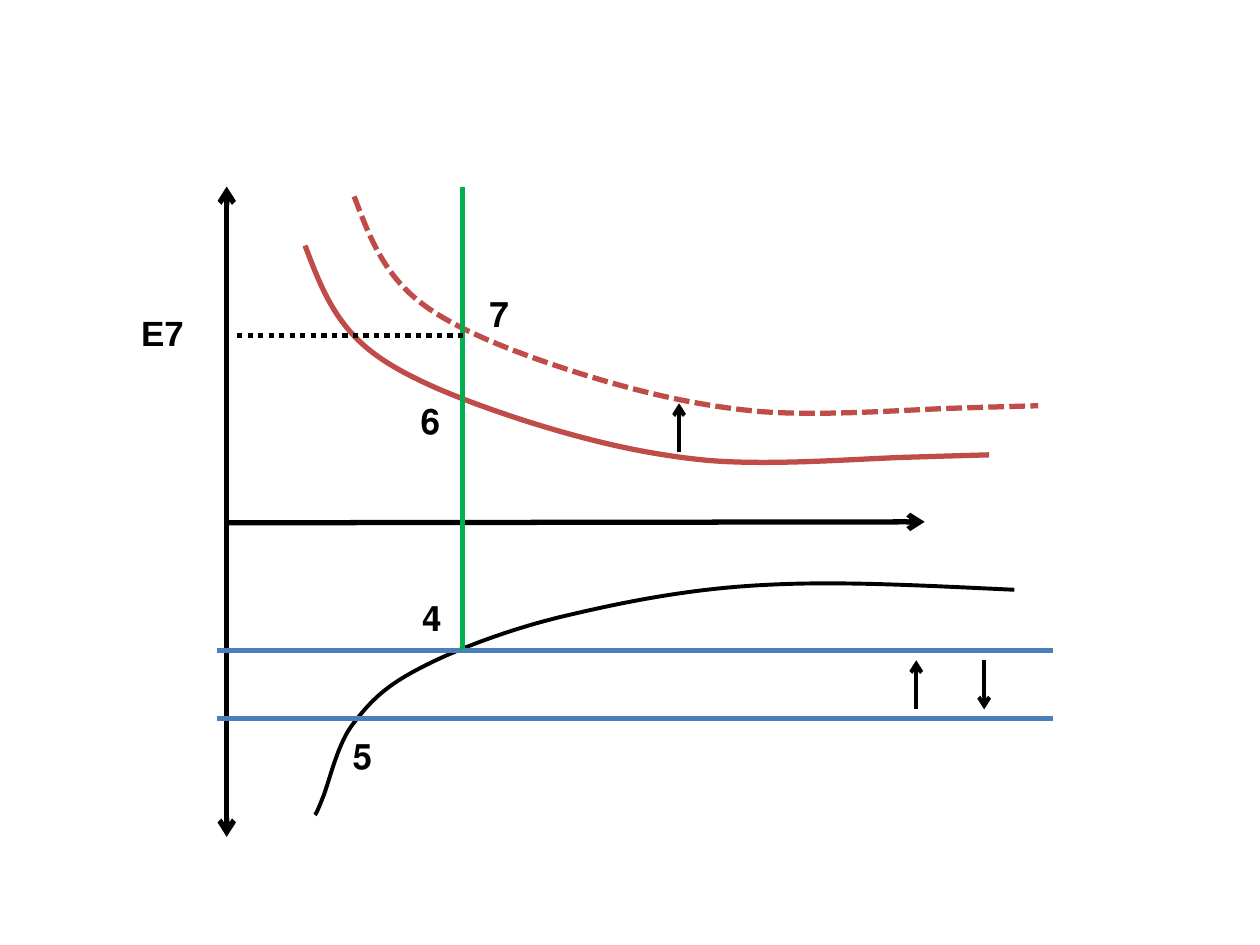
from lxml import etree
from pptx import Presentation, util as u
from pptx.dml.color import RGBColor
from pptx.enum import dml, shapes, text
from pptx.oxml.ns import qn

BLACK, RED, BLUE, GREEN = "000000", "BF4C48", "4B7EBC", "00B050"
THICK, THIN = 3, 2.25
DASHED, DOTTED = dml.MSO_LINE.SQUARE_DOT, dml.MSO_LINE.ROUND_DOT

AXIS_X, AXIS_TOP, AXIS_BOTTOM = 4.57, 3.76, 16.87
LEVELS = (13.11, 14.48)
GREEN_X = 9.32
CURVE_SHIFT = 0.99

# Each curve: a start point, then two control points and an end point per segment.
LOWER_CURVE = [
    (20.45, 11.89),
    (18.69, 11.81), (16.97, 11.71), (15.47, 11.79),
    (13.97, 11.86), (12.65, 12.12), (11.46, 12.4),
    (10.29, 12.67), (9.14, 13.11), (8.43, 13.49),
    (7.7, 13.87), (7.42, 14.2), (7.09, 14.63),
    (6.78, 15.06), (6.63, 15.8), (6.5, 16.1),
    (6.38, 16.41), (6.35, 16.43), (6.35, 16.43),
]
UPPER_CURVE = [
    (6.15, 4.95),
    (6.45, 5.74), (6.73, 6.5), (7.49, 7.09),
    (8.23, 7.67), (9.55, 8.15), (10.67, 8.51),
    (11.79, 8.86), (12.9, 9.14), (14.15, 9.27),
    (15.42, 9.4), (17.27, 9.25), (18.24, 9.22),
    (19.2, 9.19), (19.94, 9.17), (19.94, 9.17),
]
LABELS = [  # text, left, top, width
    ("E7", 2.39, 6.15, 1.57),
    ("7", 9.32, 5.77, 1.19),
    ("5", 6.35, 14.68, 1.4),
    ("4", 7.75, 11.91, 1.4),
    ("6", 8.13, 7.92, 0.99),
]


def color(hex_string):
    return RGBColor.from_string(hex_string)


def apply(target, values):
    for name, value in values.items():
        setattr(target, name, value)


class Diagram:
    font = {"name": "Arial", "size": u.Pt(20), "bold": True}
    label_height = 1.12

    def __init__(self, slide):
        self.slide = slide

    def stroke(self, shape, hex_string, width, dash=None, ends=()):
        shape.line.color.rgb = color(hex_string)
        apply(shape.line, {"width": u.Pt(width), "dash_style": dash})
        for end in ends:
            etree.SubElement(shape.line._get_or_add_ln(), qn(f"a:{end}End"), type="arrow")

    def line(self, start, end, hex_string, width, dash=None, ends=(), group=None):
        owner = group or self.slide
        connector = owner.shapes.add_connector(
            shapes.MSO_CONNECTOR.STRAIGHT, *map(u.Cm, start + end))
        self.stroke(connector, hex_string, width, dash, ends)
        etree.SubElement(connector._element.spPr, qn("a:effectLst"))

    def curve(self, points, hex_string, width, dash=None):
        """Draw a freeform through the end points and bend each segment."""
        points = [(u.Cm(x), u.Cm(y)) for x, y in points]
        builder = self.slide.shapes.build_freeform(*points[0])
        builder.add_line_segments(points[3::3], close=False)
        shape = builder.convert_to_shape()
        shape.fill.background()
        shape.shadow.inherit = False
        self.stroke(shape, hex_string, width, dash)
        segments = list(shape._element.iter(qn("a:lnTo")))
        for index, segment in enumerate(segments):
            bend = etree.Element(qn("a:cubicBezTo"))
            for x, y in points[3 * index + 1:3 * index + 4]:
                etree.SubElement(bend, qn("a:pt"),
                                 x=str(x - shape.left), y=str(y - shape.top))
            segment.getparent().replace(segment, bend)

    def label(self, words, left, top, width):
        box = self.slide.shapes.add_textbox(
            *map(u.Cm, (left, top, width, self.label_height)))
        apply(box.text_frame, {"word_wrap": True,
                               "auto_size": text.MSO_AUTO_SIZE.SHAPE_TO_FIT_TEXT})
        paragraph = box.text_frame.paragraphs[0]
        paragraph.alignment = text.PP_ALIGN.RIGHT
        paragraph._p.get_or_add_pPr().set("rtl", "1")
        run = paragraph.add_run()
        run.text = words
        apply(run.font, self.font)
        run.font.color.rgb = color(BLACK)


def main():
    presentation = Presentation()
    apply(presentation, {"slide_width": u.Cm(25.4), "slide_height": u.Cm(19.05)})
    diagram = Diagram(presentation.slides.add_slide(presentation.slide_layouts[6]))

    axes = diagram.slide.shapes.add_group_shape()
    diagram.line((AXIS_X, 10.54), (18.64, 10.52), BLACK, THICK, ends=("tail",), group=axes)
    diagram.line((AXIS_X, AXIS_TOP), (AXIS_X, AXIS_BOTTOM), BLACK, THICK,
                 ends=("head", "tail"), group=axes)

    diagram.curve(LOWER_CURVE, BLACK, THIN)
    shifted_curve = [(x + CURVE_SHIFT, y - CURVE_SHIFT) for x, y in UPPER_CURVE]
    diagram.curve(shifted_curve, RED, THICK, DASHED)
    diagram.curve(UPPER_CURVE, RED, THICK)

    for level in LEVELS:
        diagram.line((4.37, level), (21.23, level), BLUE, THICK)
    for x, start, end in [(13.69, 9.12, 8.13), (19.84, 13.31, 14.3), (18.47, 14.3, 13.31)]:
        diagram.line((x, start), (x, end), BLACK, THIN, ends=("tail",))
    diagram.line((GREEN_X, LEVELS[0]), (GREEN_X, AXIS_TOP), GREEN, THICK)
    diagram.line((4.78, 6.76), (9.35, 6.76), BLACK, THICK, DOTTED)

    for label in LABELS:
        diagram.label(*label)
    presentation.save("out.pptx")


if __name__ == "__main__":
    main()
